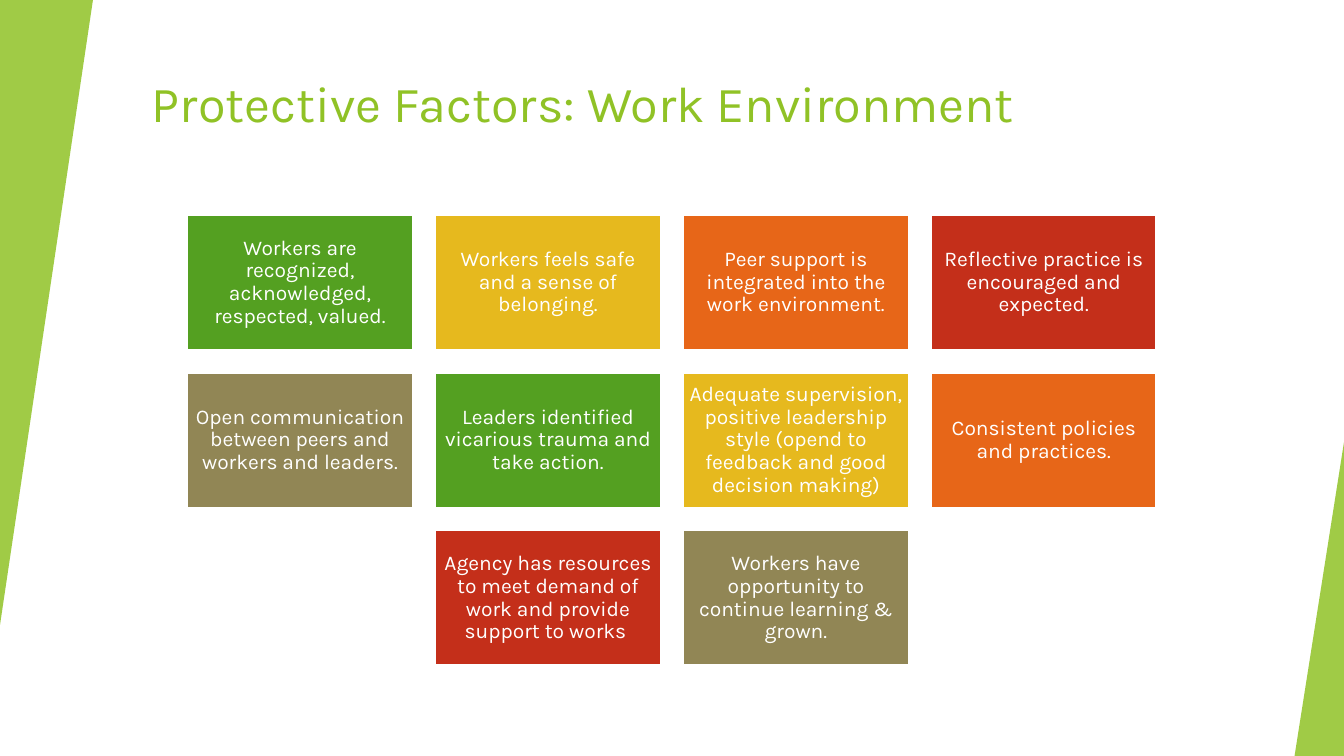
import pptx
import pptx.dml.color
import pptx.enum.shapes
import pptx.enum.text
import pptx.oxml
import pptx.oxml.ns
import pptx.util

Pt = pptx.util.Pt
RGBColor = pptx.dml.color.RGBColor
MSO_SHAPE = pptx.enum.shapes.MSO_SHAPE
PP_ALIGN = pptx.enum.text.PP_ALIGN
MSO_ANCHOR = pptx.enum.text.MSO_ANCHOR

LIME = RGBColor(0x90, 0xC2, 0x26)
GREEN = RGBColor(0x54, 0xA0, 0x21)
YELLOW = RGBColor(0xE6, 0xB9, 0x1E)
ORANGE = RGBColor(0xE7, 0x66, 0x18)
RED = RGBColor(0xC4, 0x2F, 0x1A)
OLIVE = RGBColor(0x91, 0x86, 0x55)
WHITE = RGBColor(0xFF, 0xFF, 0xFF)
CARD_COLORS = [GREEN, YELLOW, ORANGE, RED, OLIVE]

SLIDE_W, SLIDE_H = 960, 540
COLUMNS = 4
CARD_W, CARD_H, GAP = 161, 96.6, 16.1
CARDS_TOP = 153.4

FACTORS = [
    "Workers are recognized, acknowledged, respected, valued.",
    "Workers feels safe and a sense of belonging.",
    "Peer support is integrated into the work environment.",
    "Reflective practice is encouraged and expected.",
    "Open communication between peers and workers and leaders.",
    "Leaders identified vicarious trauma and take action.",
    "Adequate supervision, positive leadership style (opend to feedback and good decision making)",
    "Consistent policies and practices.",
    "Agency has resources to meet demand of work and provide support to works ",
    "Workers have opportunity to continue learning & grown.",
]


def write_text(tf, text, size=15, color=WHITE, align=PP_ALIGN.LEFT,
               anchor=MSO_ANCHOR.TOP, spacing=1.0, inset=None, font="Karla"):
    tf.word_wrap = True
    tf.vertical_anchor = anchor
    if inset is not None:
        tf.margin_left = tf.margin_right = tf.margin_top = tf.margin_bottom = Pt(inset)
    p = tf.paragraphs[0]
    p.alignment = align
    p.line_spacing = spacing
    r = p.add_run()
    r.text = text
    r.font.name = font
    r.font.size = Pt(size)
    r.font.color.rgb = color


class Deck:
    def __init__(self, slide):
        self.s = slide

    def shape(self, kind, x, y, w, h, fill):
        sp = self.s.shapes.add_shape(kind, Pt(x), Pt(y), Pt(w), Pt(h))
        sp.shadow.inherit = False
        sp.fill.solid()
        sp.fill.fore_color.rgb = fill
        sp.line.fill.background()
        return sp

    def title(self, text, x, y, w, h):
        sp = self.s.shapes.add_textbox(Pt(x), Pt(y), Pt(w), Pt(h))
        write_text(sp.text_frame, text, size=36, color=LIME)

    def wedge(self, x, y, w, h, rotation=0):
        sp = self.shape(MSO_SHAPE.ISOSCELES_TRIANGLE, x, y, w, h, LIME)
        sp.adjustments[0] = 1
        sp.rotation = rotation
        # 85 % opacity
        clr = sp.fill._xPr.find(".//" + pptx.oxml.ns.qn("a:srgbClr"))
        clr.append(pptx.oxml.parse_xml(
            "<a:alpha %s val='85000'/>" % pptx.oxml.ns.nsdecls("a")))

    def card(self, text, x, y, fill):
        sp = self.shape(MSO_SHAPE.RECTANGLE, x, y, CARD_W, CARD_H, fill)
        sp.line.color.rgb = WHITE
        sp.line.width = Pt(1.5)
        write_text(sp.text_frame, text, align=PP_ALIGN.CENTER,
                   anchor=MSO_ANCHOR.MIDDLE, spacing=0.9, inset=4.2)


def main():
    prs = pptx.Presentation()
    prs.slide_width, prs.slide_height = Pt(SLIDE_W), Pt(SLIDE_H)
    deck = Deck(prs.slides.add_slide(prs.slide_layouts[6]))

    # Title
    deck.title("Protective Factors: Work Environment", 101.5, 48, 803, 86.4)

    # Side wedges
    deck.wedge(0, 0, 66.4, 446.4, rotation=180)
    deck.wedge(924.7, 316, 35.3, 224)

    # Cards, each row centred on the slide
    for i, text in enumerate(FACTORS):
        row, col = divmod(i, COLUMNS)
        count = min(COLUMNS, len(FACTORS) - row * COLUMNS)
        left = (SLIDE_W - count * CARD_W - (count - 1) * GAP) / 2
        deck.card(text, left + col * (CARD_W + GAP),
                  CARDS_TOP + row * (CARD_H + GAP),
                  CARD_COLORS[i % len(CARD_COLORS)])

    prs.save("out.pptx")


if __name__ == "__main__":
    main()
